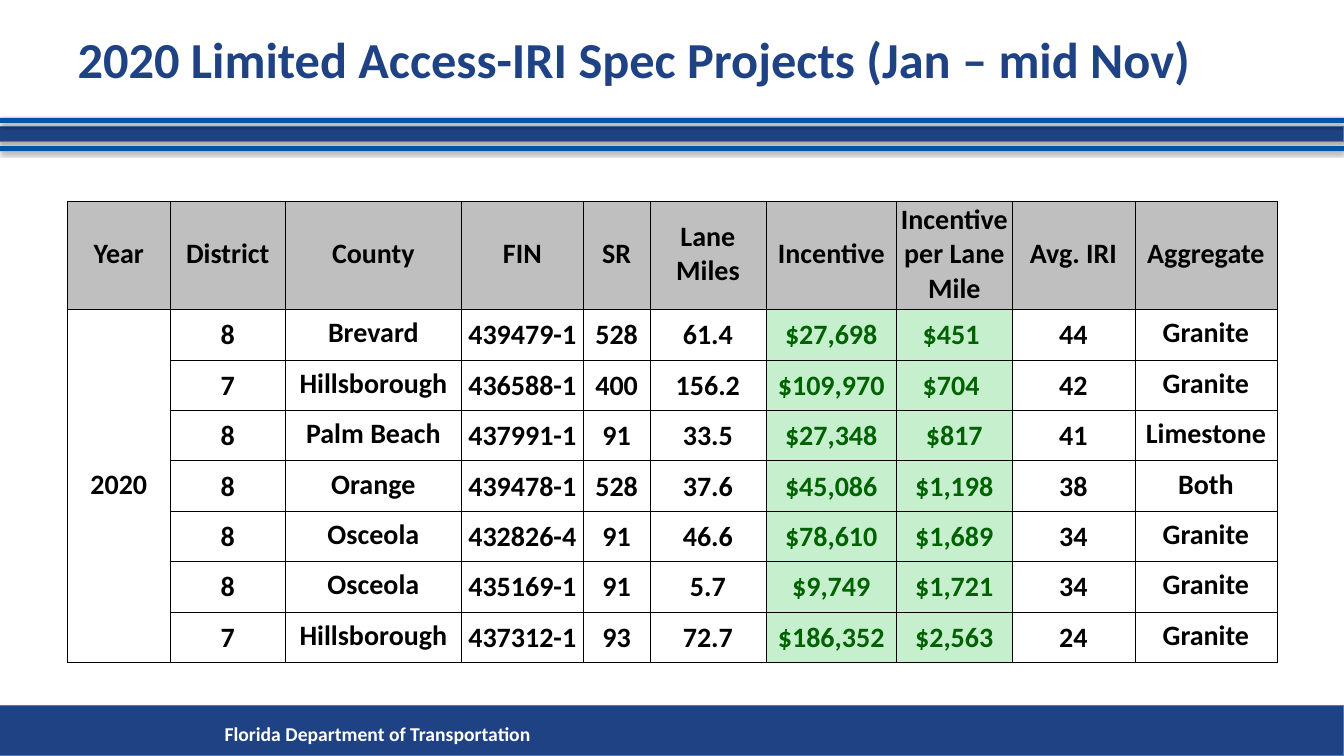
from dataclasses import dataclass

from lxml import etree
from pptx import Presentation
from pptx.dml.color import RGBColor
from pptx.enum.shapes import MSO_SHAPE
from pptx.enum.text import MSO_ANCHOR, MSO_AUTO_SIZE, PP_ALIGN
from pptx.oxml import parse_xml
from pptx.oxml.ns import nsdecls, qn
from pptx.util import Cm, Pt

RECTANGLE = MSO_SHAPE.RECTANGLE
MIDDLE, TOP = MSO_ANCHOR.MIDDLE, MSO_ANCHOR.TOP
LEFT, CENTER = PP_ALIGN.LEFT, PP_ALIGN.CENTER
NO_FIT, GROW = MSO_AUTO_SIZE.NONE, MSO_AUTO_SIZE.SHAPE_TO_FIT_TEXT

SLIDE_WIDTH, SLIDE_HEIGHT = 33.87, 19.05
HEADER_HEIGHT, ROW_HEIGHT = 2.72, 1.27
COLUMNS = {
    "Year": 2.59, "District": 2.9, "County": 4.44, "FIN": 3.07, "SR": 1.68,
    "Lane Miles": 2.92, "Incentive": 3.3, "Incentive per Lane Mile": 2.9,
    "Avg. IRI": 3.1, "Aggregate": 3.58,
}
WORD_COLUMNS = {"Year", "County", "Aggregate"}
MONEY_COLUMNS = {"Incentive", "Incentive per Lane Mile"}
PROJECTS = [
    ("2020", "8", "Brevard", "439479-1", "528", "61.4", "$27,698", "$451 ", "44", "Granite"),
    ("", "7", "Hillsborough", "436588-1", "400", "156.2", "$109,970", "$704 ", "42", "Granite"),
    ("", "8", "Palm Beach", "437991-1", "91", "33.5", "$27,348", "$817", "41", "Limestone"),
    ("", "8", "Orange", "439478-1", "528", "37.6", "$45,086", "$1,198", "38", "Both"),
    ("", "8", "Osceola", "432826-4", "91", "46.6", "$78,610", "$1,689", "34", "Granite"),
    ("", "8", "Osceola", "435169-1", "91", "5.7", "$9,749", "$1,721", "34", "Granite"),
    ("", "7", "Hillsborough", "437312-1", "93", "72.7", "$186,352", "$2,563", "24", "Granite"),
]


@dataclass(frozen=True)
class Theme:
    font: str = "Calibri"
    navy: str = "1F4284"
    blue: str = "0054A8"
    edge: str = "4B7EBC"
    white: str = "FFFFFF"
    black: str = "000000"
    header: str = "BFBFBF"
    money_fill: str = "C6EFCE"
    money_text: str = "006100"
    title_size: int = 36
    table_size: int = 20
    footer_size: int = 14
    rule: float = 0.5
    header_rule: float = 1


class SlideBuilder:
    def __init__(self, slide, theme):
        self.slide = slide
        self.theme = theme

    def add_text(self, frame, text, size, color, align=LEFT):
        para = frame.paragraphs[0]
        para.alignment = align
        span = para.add_run()
        span.text = text
        formats = {"name": self.theme.font, "size": Pt(size), "bold": True}
        for name, value in formats.items():
            setattr(span.font, name, value)
        span.font.color.rgb = RGBColor.from_string(color)

    def frame(self, box, anchor, fit):
        """Set wrapping, anchor and fitting of a box and return its text frame."""
        formats = {"word_wrap": True, "vertical_anchor": anchor, "auto_size": fit}
        for name, value in formats.items():
            setattr(box.text_frame, name, value)
        return box.text_frame

    def title(self, text, left, top, width, height):
        box = self.slide.shapes.title
        places = {"left": left, "top": top, "width": width, "height": height}
        for name, value in places.items():
            setattr(box, name, Cm(value))
        self.add_text(self.frame(box, MIDDLE, NO_FIT), text,
                      self.theme.title_size, self.theme.navy)

    def footer(self, text, left, top, width, height):
        box = self.slide.shapes.add_textbox(Cm(left), Cm(top), Cm(width), Cm(height))
        self.add_text(self.frame(box, TOP, GROW), text,
                      self.theme.footer_size, self.theme.white)

    def band(self, top, height, color, edge=None):
        """Draw a shadowed band across the whole slide."""
        bar = self.slide.shapes.add_shape(
            RECTANGLE, 0, Cm(top), Cm(SLIDE_WIDTH), Cm(height))
        bar.fill.solid()
        bar.fill.fore_color.rgb = RGBColor.from_string(color)
        if edge:
            bar.line.color.rgb = RGBColor.from_string(edge)
            bar.line.width = Pt(0.75)
        else:
            bar.line.fill.background()
        bar.shadow.inherit = False
        effects = bar._element.spPr.find(qn("a:effectLst"))
        effects.append(parse_xml(
            f'<a:outerShdw {nsdecls("a")} blurRad="{Pt(3.1)}" dist="{Pt(1.8)}" '
            f'dir="5400000" rotWithShape="0"><a:srgbClr val="{self.theme.black}">'
            '<a:alpha val="35000"/></a:srgbClr></a:outerShdw>'))

    def borders(self, cell, top, bottom):
        properties = cell._tc.get_or_add_tcPr()
        rule = self.theme.rule
        for side, width in {"L": rule, "R": rule, "T": top, "B": bottom}.items():
            line = etree.SubElement(properties, qn(f"a:ln{side}"), w=str(Pt(width)))
            fill = etree.SubElement(line, qn("a:solidFill"))
            etree.SubElement(fill, qn("a:srgbClr"), val=self.theme.black)

    def cell(self, cell, text, row, column):
        theme = self.theme
        is_header = row == 0
        is_money = column in MONEY_COLUMNS and not is_header
        self.borders(cell, theme.header_rule if row == 1 else theme.rule,
                     theme.header_rule if is_header else theme.rule)
        bottom = 0.1 if is_header or column in WORD_COLUMNS else 0
        margins = {"left": 0.03, "right": 0.03, "top": 0.03, "bottom": bottom}
        for side, margin in margins.items():
            setattr(cell, f"margin_{side}", Cm(margin))
        cell.vertical_anchor = MIDDLE
        if is_header or is_money:
            cell.fill.solid()
            color = theme.header if is_header else theme.money_fill
            cell.fill.fore_color.rgb = RGBColor.from_string(color)
        else:
            cell.fill.background()
        if text:
            self.add_text(cell.text_frame, text, theme.table_size,
                          theme.money_text if is_money else theme.black, CENTER)

    def table(self, columns, records, left, top):
        rows = [tuple(columns), *records]
        height = HEADER_HEIGHT + ROW_HEIGHT * len(records)
        table = self.slide.shapes.add_table(
            len(rows), len(columns), Cm(left), Cm(top),
            Cm(sum(columns.values())), Cm(height)).table
        table.first_row = table.horz_banding = False
        for column, width in zip(table.columns, columns.values()):
            column.width = Cm(width)
        for index, values in enumerate(rows):
            table.rows[index].height = Cm(ROW_HEIGHT if index else HEADER_HEIGHT)
            for position, (name, text) in enumerate(zip(columns, values)):
                self.cell(table.cell(index, position), text, index, name)
        table.cell(1, 0).merge(table.cell(len(records), 0))


def main():
    deck = Presentation()
    deck.slide_width, deck.slide_height = Cm(SLIDE_WIDTH), Cm(SLIDE_HEIGHT)
    theme = Theme()
    page = SlideBuilder(deck.slides.add_slide(deck.slide_layouts[5]), theme)
    page.band(3.18, 0.38, theme.navy, theme.edge)
    page.band(3.68, 0.13, theme.blue)
    page.band(2.97, 0.13, theme.blue)
    page.band(17.78, 1.27, theme.navy, theme.edge)
    page.footer("Florida Department of Transportation", 5.41, 18.06, 27.03, 0.86)
    page.title("2020 Limited Access-IRI Spec Projects (Jan – mid Nov)",
               1.7, 0.03, 30.48, 2.9)
    page.table(COLUMNS, PROJECTS, 1.7, 5.08)
    deck.save("out.pptx")


if __name__ == "__main__":
    main()
